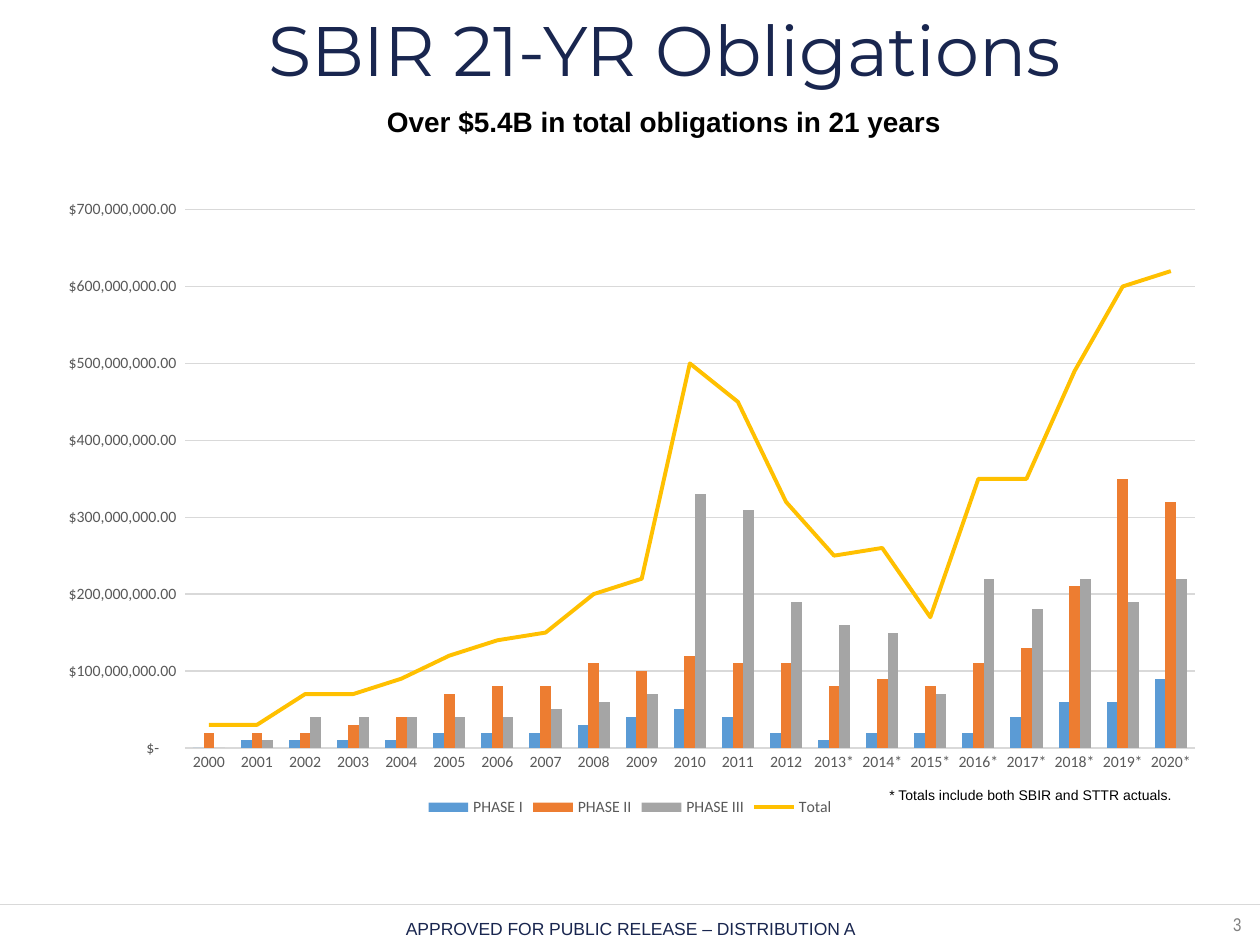
from dataclasses import dataclass

from lxml.etree import SubElement
from pptx import Presentation
from pptx.chart.data import CategoryChartData as Data
from pptx.dml.color import RGBColor
from pptx.enum.chart import XL_CHART_TYPE as Kind
from pptx.enum.chart import XL_LEGEND_POSITION as Side
from pptx.enum.chart import XL_TICK_MARK as Tick
from pptx.enum.shapes import MSO_CONNECTOR as Link
from pptx.enum.text import MSO_ANCHOR as Anchor
from pptx.enum.text import MSO_AUTO_SIZE as Fit
from pptx.enum.text import PP_ALIGN as Align
from pptx.oxml import parse_xml
from pptx.oxml.ns import qn
from pptx.util import Pt

PX = 9144
NAVY, BLACK, GREY, RULE = "19264F", "000000", "595959", "D9D9D9"
MONEY = r'_("$"* #,##0.00_);_("$"* \(#,##0.00\);_("$"* "-"??_);_(@_)'
UNIT = 10_000_000
YEARS = [f"{year}{'*' if year > 2012 else ''}" for year in range(2000, 2021)]


@dataclass
class Box:
    left: int
    top: int
    width: int
    height: int

    def emu(self) -> list[int]:
        return [n * PX for n in (self.left, self.top, self.width, self.height)]


@dataclass
class Label:
    text: str
    box: Box
    size: float
    face: str = "Arial"
    color: str = BLACK
    bold: bool = False
    align: Align = Align.CENTER
    wrap: bool = True


@dataclass
class Row:
    name: str
    color: str
    vals: list[int]


LABELS = [
    Label("3", Box(964, 720, 36, 29), 10.5, "Arial Narrow", "808080", wrap=False),
    Label("APPROVED FOR PUBLIC RELEASE – DISTRIBUTION A",
          Box(209, 724, 583, 27), 10, color=NAVY),
    Label("* Totals include both SBIR and STTR actuals.",
          Box(696, 619, 250, 24), 8, align=Align.LEFT),
    Label("Over $5.4B in total obligations in 21 years",
          Box(183, 78, 688, 37), 16, bold=True),
]
HEAD = Label("SBIR 21-YR Obligations", Box(88, 7, 879, 71), 40, "Montserrat", NAVY)

ROWS = [
    Row("PHASE I", "5B9BD5",
        [0, 1, 1, 1, 1, 2, 2, 2, 3, 4, 5, 4, 2, 1, 2, 2, 2, 4, 6, 6, 9]),
    Row("PHASE II", "ED7D31",
        [2, 2, 2, 3, 4, 7, 8, 8, 11, 10, 12, 11, 11, 8, 9, 8, 11, 13, 21, 35, 32]),
    Row("PHASE III", "A5A5A5",
        [0, 1, 4, 4, 4, 4, 4, 5, 6, 7, 33, 31, 19, 16, 15, 7, 22, 18, 22, 19, 22]),
    Row("Total", "FFC000",
        [3, 3, 7, 7, 9, 12, 14, 15, 20, 22, 50, 45, 32, 25, 26, 17, 35, 35, 49, 60, 62]),
]


def tint(code: str) -> RGBColor:
    return RGBColor.from_string(code)


def style(font, face: str, size: float, color: str, bold: bool = False) -> None:
    font.name = face
    font.size = Pt(size)
    font.bold = bold
    font.color.rgb = tint(color)


def stroke(line, color: str, width: float) -> None:
    line.color.rgb = tint(color)
    line.width = Pt(width)


def write(shape, label: Label) -> None:
    shape.left, shape.top, shape.width, shape.height = label.box.emu()
    frame = shape.text_frame
    frame.text = label.text
    frame.word_wrap = label.wrap
    para = frame.paragraphs[0]
    para.alignment = label.align
    style(para.runs[0].font, label.face, label.size, label.color, label.bold)


def add_head(slide) -> None:
    title = slide.shapes.title
    write(title, HEAD)
    frame = title.text_frame
    frame.auto_size = Fit.NONE
    frame.vertical_anchor = Anchor.MIDDLE
    frame.paragraphs[0].line_spacing = 0.9


def add_label(slide, label: Label) -> None:
    shape = slide.shapes.add_textbox(*label.box.emu())
    write(shape, label)
    shape.text_frame.auto_size = Fit.SHAPE_TO_FIT_TEXT


def add_rule(slide) -> None:
    rule = slide.shapes.add_connector(Link.STRAIGHT, 0, 718 * PX, 1000 * PX, 718 * PX)
    stroke(rule.line, RULE, 0.5)
    SubElement(rule._element.spPr, qn("a:effectLst"))


def make_line(chart) -> None:
    bars = chart._chartSpace.find(".//" + qn("c:barChart"))
    ser = bars.findall(qn("c:ser"))[-1]
    for flag in ser.findall(qn("c:invertIfNegative")):
        ser.remove(flag)
    mark = SubElement(ser, qn("c:marker"))
    SubElement(mark, qn("c:symbol")).set("val", "none")
    ser.find(qn("c:spPr")).addnext(mark)
    SubElement(ser, qn("c:smooth")).set("val", "0")
    plot = parse_xml(
        '<c:lineChart xmlns:c="http://schemas.openxmlformats.org/drawingml/2006/chart">'
        '<c:grouping val="standard"/><c:varyColors val="0"/></c:lineChart>')
    plot.append(ser)
    SubElement(plot, qn("c:marker")).set("val", "1")
    for axis in bars.findall(qn("c:axId")):
        SubElement(plot, qn("c:axId")).set("val", axis.get("val"))
    bars.addnext(plot)


def add_graph(slide) -> None:
    data = Data(number_format=MONEY)
    data.categories = YEARS
    for row in ROWS:
        data.add_series(row.name, [val * UNIT for val in row.vals])
    box = Box(33, 149, 934, 503)
    chart = slide.shapes.add_chart(Kind.COLUMN_CLUSTERED, *box.emu(), data).chart
    style(chart.font, "Calibri", 10, BLACK)
    chart.has_title = False
    chart.has_legend = True
    chart.legend.position = Side.BOTTOM
    chart.legend.include_in_layout = False
    style(chart.legend.font, "Calibri", 9, GREY)

    cats, vals = chart.category_axis, chart.value_axis
    for axis in (cats, vals):
        axis.major_tick_mark = axis.minor_tick_mark = Tick.NONE
        style(axis.tick_labels.font, "Calibri", 9, GREY)
    stroke(cats.format.line, RULE, 0.75)
    vals.format.line.fill.background()
    stroke(vals.major_gridlines.format.line, RULE, 0.75)
    vals.minimum_scale, vals.maximum_scale = 0, 70 * UNIT
    vals.major_unit = 10 * UNIT
    vals.tick_labels.number_format = MONEY
    vals.tick_labels.number_format_is_linked = False

    plot = chart.plots[0]
    plot.gap_width = 150
    plot.overlap = 0
    plot.vary_by_categories = False
    *bars, total = plot.series
    for bar, row in zip(bars, ROWS):
        bar.format.fill.solid()
        bar.format.fill.fore_color.rgb = tint(row.color)
    stroke(total.format.line, ROWS[-1].color, 2.25)
    make_line(chart)


def main() -> None:
    deck = Presentation()
    deck.slide_width, deck.slide_height = 1000 * PX, 750 * PX
    slide = deck.slides.add_slide(deck.slide_layouts[5])
    add_rule(slide)
    add_head(slide)
    add_graph(slide)
    for label in LABELS:
        add_label(slide, label)
    deck.save("out.pptx")


if __name__ == "__main__":
    main()
